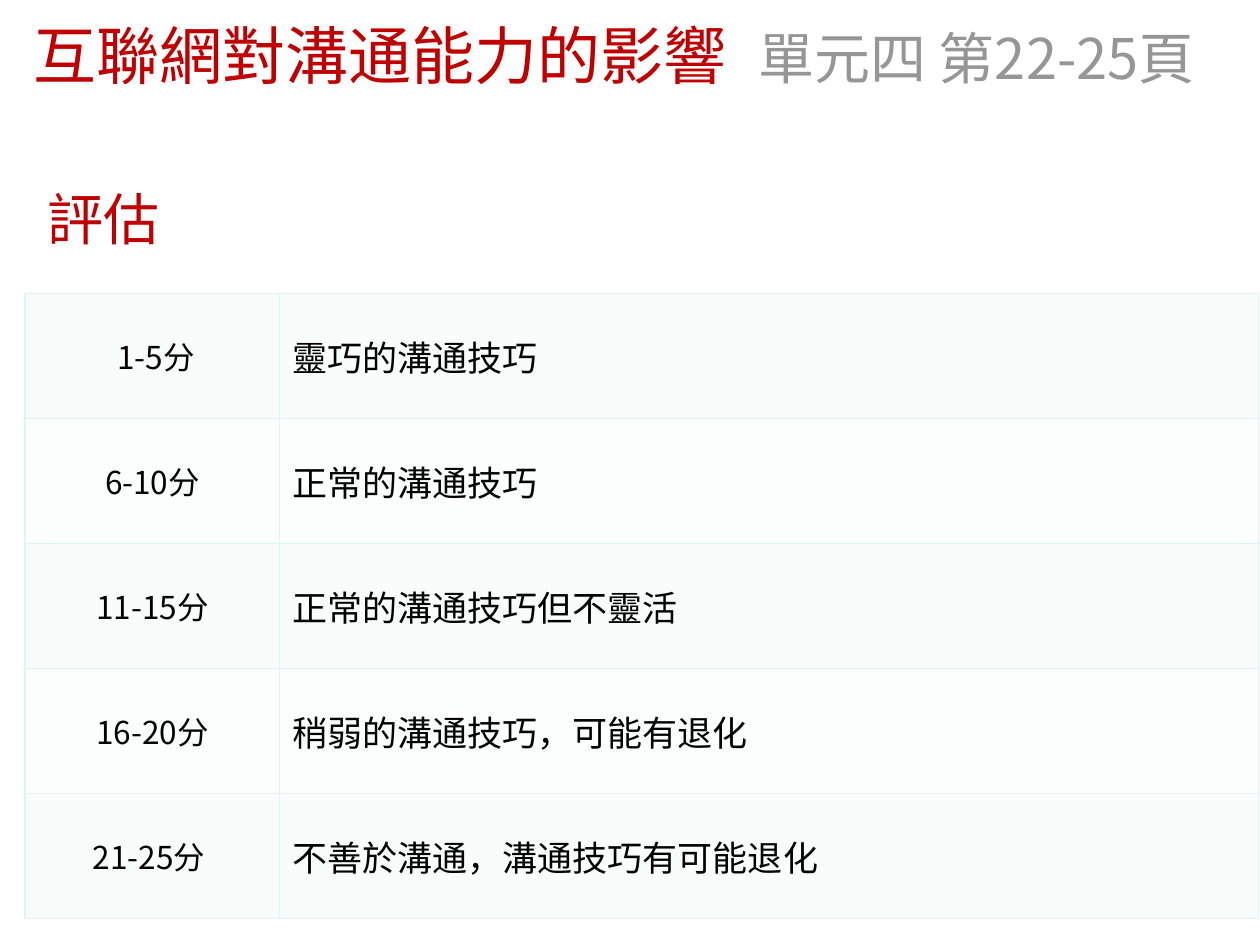
from lxml.etree import SubElement
from pptx import Presentation
from pptx.dml.color import RGBColor
from pptx.enum.text import MSO_ANCHOR, PP_ALIGN
from pptx.oxml.ns import qn
from pptx.util import Inches, Pt

CHINESE_FONT = "Noto Sans CJK SC"
RED, GREY, BLACK = "C00000", "969696", "000000"
BORDER = "DEF6F1"
ROW_FILLS = ("F8FDFC", "FBFEFD")
RATINGS = (
    (" 1-5分", "靈巧的溝通技巧"),
    ("6-10分", "正常的溝通技巧"),
    ("11-15分", "正常的溝通技巧但不靈活"),
    ("16-20分", "稍弱的溝通技巧，可能有退化"),
    ("21-25分 ", "不善於溝通，溝通技巧有可能退化"),
)


def color(hex_string):
    """Turn a hex string into a colour."""
    return RGBColor.from_string(hex_string)


def add_run(paragraph, text, size, hex_string, font=CHINESE_FONT, spacing=0):
    """Append one run, with the Chinese font for East Asian text."""
    run = paragraph.add_run()
    run.text = text
    run.font.size = Pt(size)
    run.font.name = font
    run.font.color.rgb = color(hex_string)
    properties = run._r.get_or_add_rPr()
    SubElement(properties, qn("a:ea"), typeface=CHINESE_FONT)
    if spacing:
        properties.set("spc", str(spacing * 100))


def add_text_box(slide, left, top, width, height):
    """Add a wrapping, vertically centred box and return its paragraph."""
    shape = slide.shapes.add_textbox(
        Inches(left), Inches(top), Inches(width), Inches(height))
    frame = shape.text_frame
    frame.word_wrap = True
    frame.vertical_anchor = MSO_ANCHOR.MIDDLE
    return frame.paragraphs[0]


def add_title(slide, left, top, width, height):
    """Add the topic followed by its unit and pages."""
    paragraph = add_text_box(slide, left, top, width, height)
    paragraph.alignment = PP_ALIGN.CENTER
    add_run(paragraph, "互聯網對溝通能力的影響", 36, RED, "Arial")
    add_run(paragraph, " ", 36, RED, "Arial", spacing=10)
    add_run(paragraph, "單元四 第22-25頁 ", 32, GREY)


def add_heading(slide, left, top, width, height):
    """Add the section heading."""
    paragraph = add_text_box(slide, left, top, width, height)
    add_run(paragraph, "評估", 32, RED)


def set_borders(cell):
    """Draw a thin line on all four sides of a cell."""
    properties = cell._tc.get_or_add_tcPr()
    for index, side in enumerate(("lnL", "lnR", "lnT", "lnB")):
        line = properties.makeelement(qn(f"a:{side}"), {"w": str(Pt(1))})
        fill = SubElement(line, qn("a:solidFill"))
        SubElement(fill, qn("a:srgbClr"), val=BORDER)
        properties.insert(index, line)


def fill_cell(cell, text, size, alignment, hex_string):
    """Write and style one table cell."""
    cell.fill.solid()
    cell.fill.fore_color.rgb = color(hex_string)
    cell.vertical_anchor = MSO_ANCHOR.MIDDLE
    set_borders(cell)
    paragraph = cell.text_frame.paragraphs[0]
    paragraph.alignment = alignment
    add_run(paragraph, text, size, BLACK)


def add_rating_table(slide, left, top, width, height):
    """Add the table of score ranges and their meaning."""
    table = slide.shapes.add_table(
        len(RATINGS), 2, Inches(left), Inches(top),
        Inches(width), Inches(height)).table
    table.first_row = False
    table.horz_banding = False
    score_width = 2.02
    table.columns[0].width = Inches(score_width)
    table.columns[1].width = Inches(width - score_width)
    for index, (score, meaning) in enumerate(RATINGS):
        row_fill = ROW_FILLS[index % 2]
        fill_cell(table.cell(index, 0), score, 18, PP_ALIGN.CENTER, row_fill)
        fill_cell(table.cell(index, 1), meaning, 20, PP_ALIGN.LEFT, row_fill)


def main():
    """Build the slide and save it."""
    presentation = Presentation()
    presentation.slide_width = Inches(10)
    presentation.slide_height = Inches(7.5)
    slide = presentation.slides.add_slide(presentation.slide_layouts[6])
    add_title(slide, -0.04, 0.05, 9.93, 0.76)
    add_heading(slide, 0.28, 1.48, 8.34, 0.5)
    add_rating_table(slide, 0.2, 2.33, 9.79, 4.96)
    presentation.save("out.pptx")


if __name__ == "__main__":
    main()
